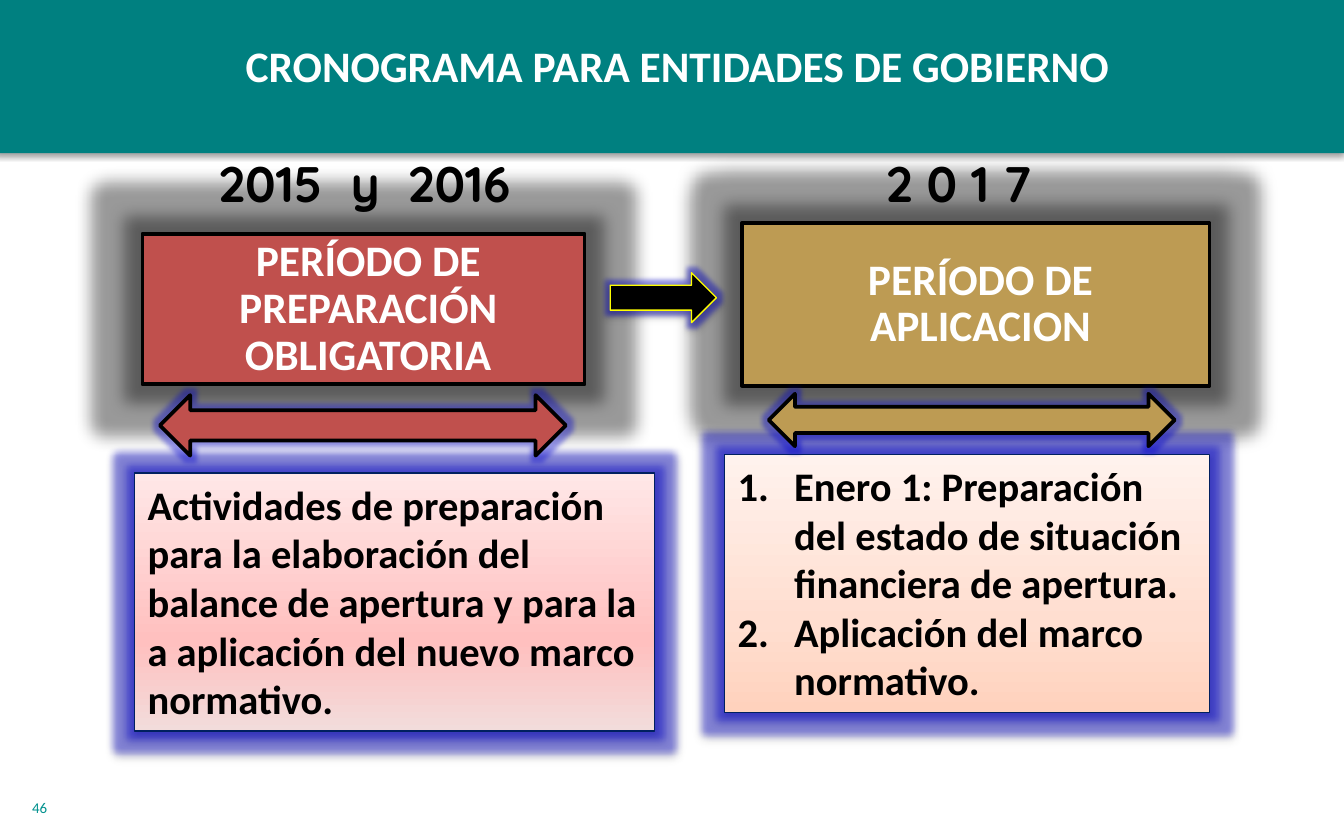
from lxml import etree
from pptx import Presentation
from pptx import util as u
from pptx.dml.color import RGBColor
from pptx.enum import shapes, text
from pptx.oxml import ns

TEAL, RED, GOLD = "008080", "C0504D", "BD9B53"
BLACK, WHITE, NAVY, BLUE = "000000", "FFFFFF", "002060", "0000CC"
SHAPE = shapes.MSO_SHAPE
CENTER = text.PP_ALIGN.CENTER


def rgb(value):
    return RGBColor.from_string(value)


def add(parent, tag, **attrs):
    return etree.SubElement(parent, ns.qn(tag), {k: str(v) for k, v in attrs.items()})


def add_color(parent, color, alpha=100):
    clr = add(parent, "a:srgbClr", val=color)
    if alpha < 100:
        add(clr, "a:alpha", val=alpha * 1000)


class Deck:
    def __init__(self, width, height):
        self.prs = Presentation()
        self.prs.slide_width = u.Inches(width)
        self.prs.slide_height = u.Inches(height)
        self.s = self.prs.slides.add_slide(self.prs.slide_layouts[6])

    def shape(self, kind, at, fill, line=None, width=2, glow=None, shadow=None):
        sp = self.s.shapes.add_shape(kind, *map(u.Inches, at))
        if isinstance(fill, str):
            sp.fill.solid()
            sp.fill.fore_color.rgb = rgb(fill)
        else:
            self.gradient(sp, fill)
        if line:
            sp.line.color.rgb = rgb(line)
            sp.line.width = u.Pt(width)
        else:
            sp.line.fill.background()
        self.effects(sp, glow, shadow)
        return sp

    def gradient(self, sp, colors):
        sp.fill.gradient()
        sp.fill.gradient_angle = 90
        stops = sp.element.spPr.find(".//" + ns.qn("a:gsLst"))
        stops.clear()
        for pos, color in zip((0, 35, 100), colors):
            add_color(add(stops, "a:gs", pos=pos * 1000), color)

    def effects(self, sp, glow, shadow):
        sp.shadow.inherit = False
        effects = sp.element.spPr.find(ns.qn("a:effectLst"))
        if glow:
            color, alpha, radius = glow
            add_color(add(effects, "a:glow", rad=u.Pt(radius)), color, alpha)
        if shadow:
            alpha, dist = shadow
            outer = add(effects, "a:outerShdw", blurRad=u.Pt(3.1), dist=u.Pt(dist),
                        dir=90 * 60000, rotWithShape=0)
            add_color(outer, BLACK, alpha)

    def put_text(self, sp, lines, size, color, bold=True, font="Calibri", align=None,
                 numbered=False, spacing=None):
        tf = sp.text_frame
        tf.word_wrap = True
        for i, line in enumerate(lines):
            p = tf.paragraphs[0] if i == 0 else tf.add_paragraph()
            p.alignment = align or text.PP_ALIGN.LEFT
            if spacing:
                p.line_spacing = spacing
            if numbered:
                pPr = p._p.get_or_add_pPr()
                pPr.set("marL", str(u.Inches(0.42)))
                pPr.set("indent", str(u.Inches(-0.42)))
                add(pPr, "a:buFont", typeface="+mj-lt")
                add(pPr, "a:buAutoNum", type="arabicPeriod")
            r = p.add_run()
            r.text = line
            r.font.name = font
            r.font.size = u.Pt(size)
            r.font.bold = bold
            r.font.color.rgb = rgb(color)
        return tf

    def label(self, at, line, size, color, **style):
        sp = self.s.shapes.add_textbox(*map(u.Inches, at))
        self.put_text(sp, [line], size, color, **style)

    def period(self, at, line, fill):
        sp = self.shape(SHAPE.RECTANGLE, at, fill, BLACK, glow=(BLACK, 40, 18))
        tf = self.put_text(sp, [line], 23.3, WHITE, align=CENTER, spacing=0.9)
        tf.vertical_anchor = text.MSO_ANCHOR.MIDDLE
        tf.margin_left, tf.margin_right = u.Inches(0.51), u.Inches(0.44)
        tf.margin_top = tf.margin_bottom = u.Inches(0.04)

    def detail(self, at, lines, colors, numbered=False):
        sp = self.shape(SHAPE.RECTANGLE, at, colors, NAVY, 0.75,
                        glow=(BLUE, 40, 8), shadow=(38, 1.6))
        tf = self.put_text(sp, lines, 21.7, BLACK, numbered=numbered)
        tf.vertical_anchor = text.MSO_ANCHOR.TOP

    def arrow(self, kind, at, fill, line=BLACK, width=2, shadow=None):
        self.shape(kind, at, fill, line, width, glow=(BLUE, 40, 5), shadow=shadow)


def main():
    deck = Deck(10, 6.25)
    deck.shape(SHAPE.RECTANGLE, (-0.04, -0.02, 10.04, 1.16), TEAL, shadow=(38, 1.6))
    deck.label((0.14, 5.89, 2.08, 0.3), "46", 8, "00918E", bold=False)

    deck.period((1.06, 1.74, 3.29, 1.12), "PERÍODO DE PREPARACIÓN OBLIGATORIA", RED)
    deck.period((5.52, 1.66, 3.48, 1.21), "PERÍODO DE APLICACION", GOLD)

    for at, years in (((1.46, 1.09, 2.51, 0.55), "2015  y  2016"),
                      ((6.38, 1.09, 1.51, 0.55), "2 0 1 7")):
        deck.label(at, years, 26.7, BLACK, font="Quicksand", align=CENTER)

    deck.detail((5.39, 3.38, 3.61, 1.92),
                ["Enero 1: Preparación del estado de situación financiera de apertura.",
                 "Aplicación del marco normativo."],
                ("FFD2BD", "FFDED0", "FFF2ED"), numbered=True)
    deck.detail((1, 3.52, 3.87, 1.92),
                ["Actividades de preparación para la elaboración del balance de apertura "
                 "y para la a aplicación del nuevo marco normativo."],
                ("F2DCDB", "FFC0BF", "FFE7E7"))

    deck.arrow(SHAPE.RIGHT_ARROW, (4.54, 2.03, 0.79, 0.37), BLACK, "FFFF00", 0.75,
               shadow=(35, 1.8))
    deck.arrow(SHAPE.LEFT_RIGHT_ARROW, (1.19, 2.94, 3.02, 0.45), RED)
    deck.arrow(SHAPE.LEFT_RIGHT_ARROW, (5.72, 2.93, 3.02, 0.39), GOLD)

    deck.label((1.33, 0.24, 7.42, 0.49), "CRONOGRAMA PARA ENTIDADES DE GOBIERNO",
               23.3, WHITE, align=CENTER)
    deck.prs.save("out.pptx")


if __name__ == "__main__":
    main()
